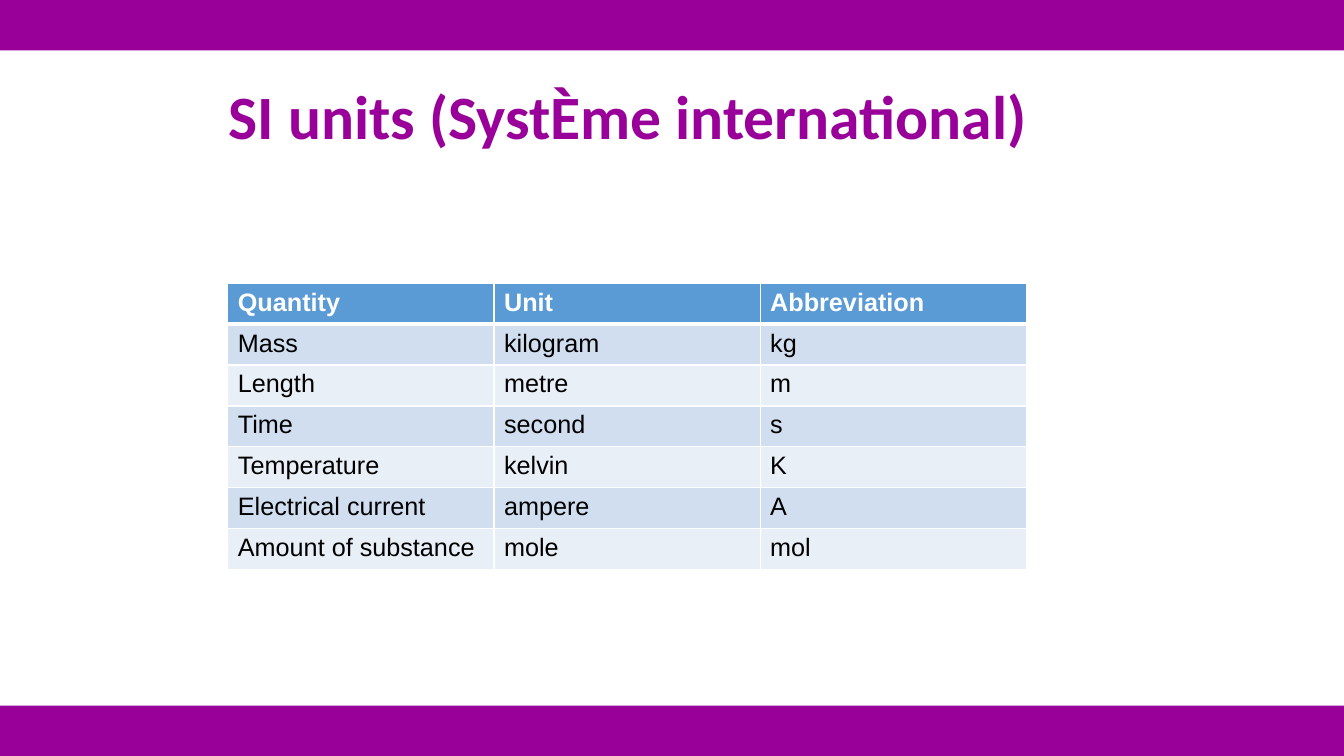
from lxml.etree import SubElement
from pptx import Presentation
from pptx.dml.color import RGBColor
from pptx.enum.shapes import MSO_SHAPE
from pptx.enum.text import MSO_ANCHOR, MSO_AUTO_SIZE, PP_ALIGN
from pptx.oxml.ns import qn
from pptx.util import Inches, Pt

COLORS = {
    "purple": "990099",
    "header": "5B9BD5",
    "odd": "D0DEEF",
    "even": "E9EFF7",
    "white": "FFFFFF",
    "black": "000000",
}
UNITS = [
    ("Quantity", "Unit", "Abbreviation"),
    ("Mass", "kilogram", "kg"),
    ("Length", "metre", "m"),
    ("Time", "second", "s"),
    ("Temperature", "kelvin", "K"),
    ("Electrical current", "ampere", "A"),
    ("Amount of substance", "mole", "mol"),
]


def add_span(para, text, font, size, color, bold):
    span = para.add_run()
    span.text = text
    span.font.name = font
    span.font.size = Pt(size)
    span.font.bold = bold
    span.font.color.rgb = RGBColor.from_string(COLORS[color])


def add_border(cell, side, width):
    line = SubElement(cell._tc.get_or_add_tcPr(), qn("a:" + side), w=str(Pt(width)))
    fill = SubElement(line, qn("a:solidFill"))
    SubElement(fill, qn("a:srgbClr"), val=COLORS["white"])


deck = Presentation()
deck.slide_width = Inches(13.33)
deck.slide_height = Inches(7.5)
page = deck.slides.add_slide(deck.slide_layouts[5])

# Bands along the bottom and top edges
for top in (7, 0):
    band = page.shapes.add_shape(
        MSO_SHAPE.RECTANGLE, 0, Inches(top), deck.slide_width, Inches(0.5))
    band.shadow.inherit = False
    band.fill.solid()
    band.fill.fore_color.rgb = RGBColor.from_string(COLORS["purple"])
    band.line.fill.background()

# Title
title = page.shapes.title
title.left, title.top = Inches(2.17), Inches(0.35)
title.width, title.height = Inches(9.22), Inches(1.67)
frame = title.text_frame
frame.word_wrap = True
frame.auto_size = MSO_AUTO_SIZE.NONE
frame.vertical_anchor = MSO_ANCHOR.MIDDLE
para = frame.paragraphs[0]
para.alignment = PP_ALIGN.LEFT
para.line_spacing = 0.9
add_span(para, "SI units (SystÈme international)", "Calibri", 44, "purple", True)

# Table of units
column_width, row_height = 2.64, 0.406
table = page.shapes.add_table(
    len(UNITS), len(UNITS[0]), Inches(2.26), Inches(2.81),
    Inches(column_width * len(UNITS[0])), Inches(row_height * len(UNITS))).table

for row, values in enumerate(UNITS):
    is_header = row == 0
    band_color = "header" if is_header else ("even", "odd")[row % 2]
    widths = {"lnL": 1, "lnR": 1, "lnT": 3 if row == 1 else 1, "lnB": 3 if is_header else 1}
    for column, text in enumerate(values):
        cell = table.cell(row, column)
        for side, width in widths.items():
            add_border(cell, side, width)
        cell.fill.solid()
        cell.fill.fore_color.rgb = RGBColor.from_string(COLORS[band_color])
        add_span(cell.text_frame.paragraphs[0], text, "Arial", 18,
                 "white" if is_header else "black", is_header)

deck.save("out.pptx")
